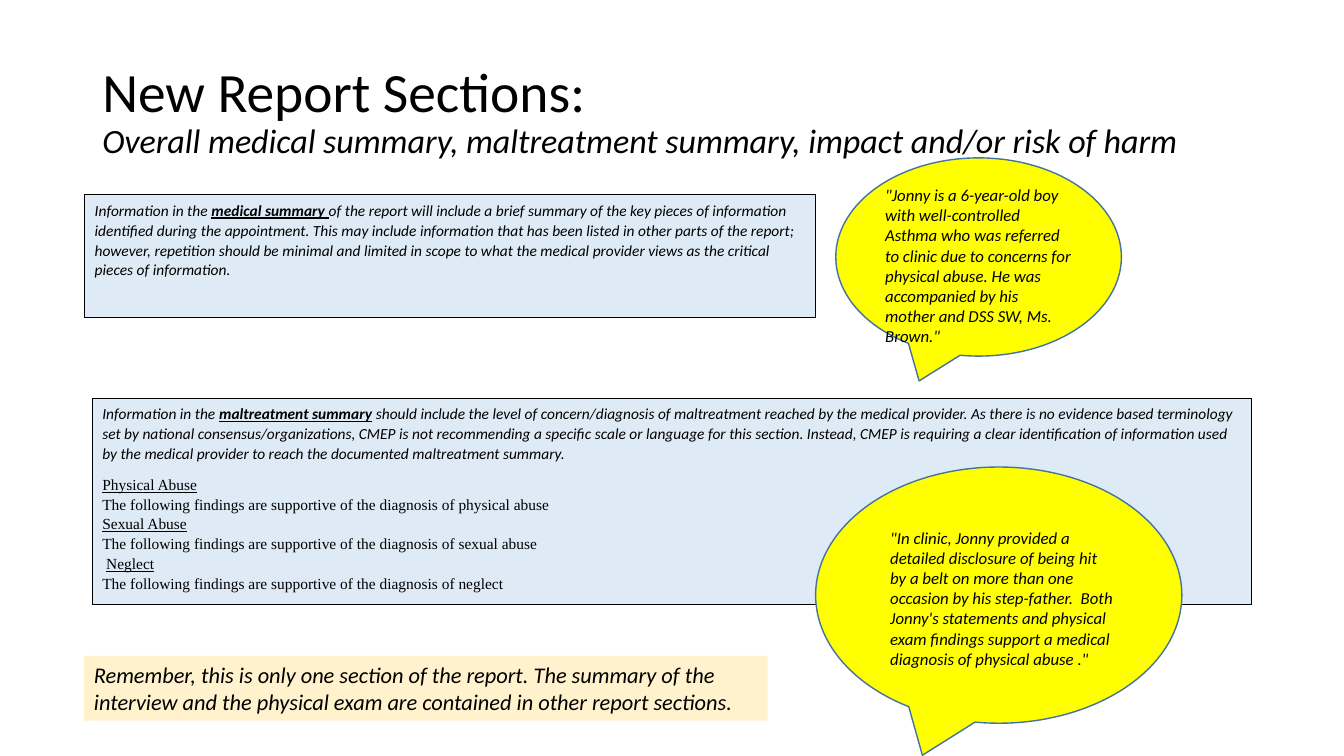
from pptx import Presentation
from pptx.dml.color import RGBColor
from pptx.enum.shapes import MSO_SHAPE
from pptx.enum.text import MSO_ANCHOR, MSO_AUTO_SIZE, PP_ALIGN
from pptx.util import Inches, Pt

RECT = MSO_SHAPE.RECTANGLE
CALLOUT = MSO_SHAPE.OVAL_CALLOUT
TOP, MIDDLE = MSO_ANCHOR.TOP, MSO_ANCHOR.MIDDLE
GROW, FIXED = MSO_AUTO_SIZE.SHAPE_TO_FIT_TEXT, MSO_AUTO_SIZE.NONE
LEFT = PP_ALIGN.LEFT

COLORS = {"text": "000000", "panel": "DEEBF7", "bubble": "FFFF00",
          "outline": "43739E", "note": "FFF2CC"}
ITALIC = {"italic": True}
KEY = {"italic": True, "bold": True, "underline": True}
SERIF = {"name": "Times New Roman"}
HEADING = {"name": "Times New Roman", "underline": True}
LOOSE = {"line_spacing": 1.07, "space_after": Pt(8)}
TIGHT = {"line_spacing": 1.07, "space_after": Pt(0)}


class Deck:
    """Slide on a grid of 160 columns by 90 rows, with its style."""

    def __init__(self, columns=160, rows=90):
        self.prs = Presentation()
        self.prs.slide_width, self.prs.slide_height = Inches(13.33), Inches(7.5)
        self.col = self.prs.slide_width / columns
        self.row = self.prs.slide_height / rows
        self.slide = self.prs.slides.add_slide(self.prs.slide_layouts[6])

    def place(self, x, y, w, h):
        """Turn grid units into slide lengths."""
        return (int(x * self.col), int(y * self.row),
                int(w * self.col), int(h * self.row))

    def color(self, name):
        """Look up a named colour."""
        return RGBColor.from_string(COLORS[name])

    def fill_text(self, s, paragraphs, size, anchor=TOP, auto_size=FIXED):
        """Fill a shape with paragraphs of formatted runs."""
        tf = s.text_frame
        for key, value in {"word_wrap": True, "auto_size": auto_size,
                           "vertical_anchor": anchor}.items():
            setattr(tf, key, value)
        for i, (layout, runs) in enumerate(paragraphs):
            p = tf.add_paragraph() if i else tf.paragraphs[0]
            for key, value in {"alignment": LEFT, **layout}.items():
                setattr(p, key, value)
            for text, style in runs:
                if text == "\n":
                    p.add_line_break()
                    continue
                r = p.add_run()
                r.text = text
                r.font.color.rgb = self.color("text")
                for key, value in {"name": "Calibri", "size": Pt(size), **style}.items():
                    setattr(r.font, key, value)

    def text(self, box, paragraphs, size, **frame):
        """Add a text box."""
        self.fill_text(self.slide.shapes.add_textbox(*self.place(*box)), paragraphs, size, **frame)

    def shape(self, kind, box, fill, line=None, weight=0.75):
        """Add a filled shape with an optional outline."""
        s = self.slide.shapes.add_shape(kind, *self.place(*box))
        s.shadow.inherit = False
        s.fill.solid()
        s.fill.fore_color.rgb = self.color(fill)
        if line:
            s.line.color.rgb = self.color(line)
            s.line.width = Pt(weight)
        else:
            s.line.fill.background()
        return s

    def panel(self, box, paragraphs):
        """Add an outlined panel of guidance."""
        self.fill_text(self.shape(RECT, box, "panel", "text"), paragraphs, 11)

    def bubble(self, box, text_box, quote):
        """Add a speech bubble with its quote."""
        self.shape(CALLOUT, box, "bubble", "outline", 1)
        self.text(text_box, [({}, [(quote, ITALIC)])], 12, auto_size=GROW)

    def note(self, box, text):
        """Add a reminder strip."""
        self.fill_text(self.shape(RECT, box, "note"), [({}, [(text, ITALIC)])], 16, auto_size=GROW)


def finding(abuse, lead=""):
    """Return a heading and its findings line."""
    sentence = f"The following findings are supportive of the diagnosis of {abuse.lower()}"
    heading = [(lead, {**SERIF, **ITALIC})] if lead else []
    return [(TIGHT, heading + [(abuse, HEADING)]), (TIGHT, [(sentence, SERIF)])]


def main():
    """Build the slide and save it."""
    deck = Deck()
    deck.text((11, 4.7, 138, 17.4), [({"line_spacing": 0.9}, [
        ("New Report Sections: ", {}), ("\n", {}),
        ("Overall medical summary, maltreatment summary, impact and/or risk of harm",
         {"size": Pt(24.3), "italic": True})])], 39.6, anchor=MIDDLE)

    deck.panel((11, 47.4, 138, 24.6), [
        (LOOSE, [("Information in the ", ITALIC), ("maltreatment summary", KEY),
                 (" should include the level of concern/diagnosis of maltreatment reached by "
                  "the medical provider. As there is no evidence based terminology set by "
                  "national consensus/organizations, CMEP is not recommending a specific scale "
                  "or language for this section. Instead, CMEP is requiring a clear "
                  "identification of information used by the medical provider to reach the "
                  "documented maltreatment summary.", ITALIC)]),
        *finding("Physical Abuse"), *finding("Sexual Abuse"), *finding("Neglect", " ")])

    deck.panel((10.1, 23.2, 87, 14.6), [
        (LOOSE, [("Information in the ", ITALIC), ("medical summary ", KEY),
                 ("of the report will include a brief summary of the key pieces of information "
                  "identified during the appointment. This may include information that has "
                  "been listed in other parts of the report; however, repetition should be "
                  "minimal and limited in scope to what the medical provider views as the "
                  "critical pieces of information.", ITALIC)])])

    deck.bubble((99.5, 18.8, 34, 23.6), (104.2, 21.4, 24.6, 18.1),
                '"Jonny is a 6-year-old boy with well-controlled Asthma who was referred to '
                'clinic due to concerns for physical abuse. He was accompanied by his mother '
                'and DSS SW, Ms. Brown."')
    deck.bubble((97.1, 55.6, 43.6, 30.5), (104.8, 62.2, 28.9, 18.1),
                '"In clinic, Jonny provided a detailed disclosure of being hit by a belt on '
                "more than one occasion by his step-father.  Both Jonny's statements and "
                'physical exam findings support a medical diagnosis of physical abuse ."')

    deck.note((10, 78.1, 81.4, 7.7),
              "Remember, this is only one section of the report. The summary of the interview "
              "and the physical exam are contained in other report sections.")
    deck.prs.save("out.pptx")


if __name__ == "__main__":
    main()
